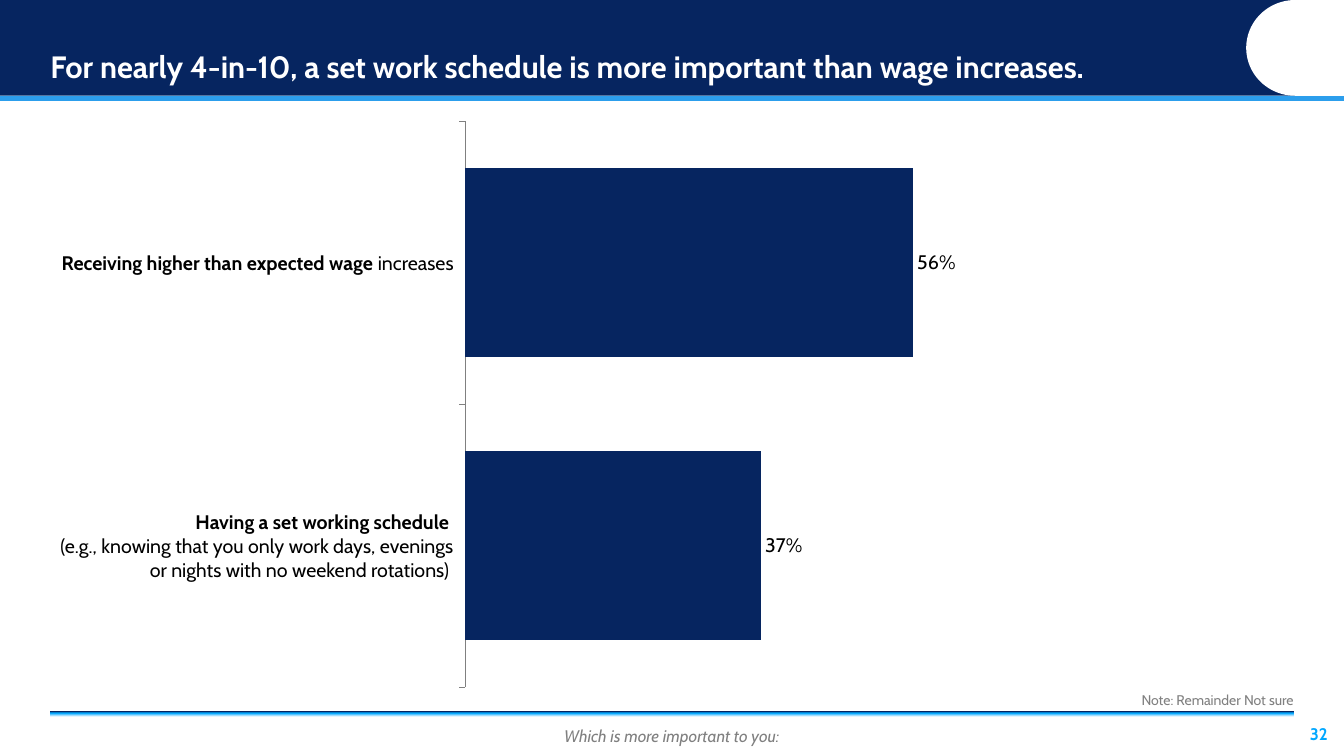
from lxml import etree
from pptx import Presentation
from pptx.chart.data import CategoryChartData
from pptx.dml.color import RGBColor
from pptx.enum.chart import XL_CHART_TYPE as ChartType, XL_LABEL_POSITION as LabelPosition
from pptx.enum.chart import XL_TICK_LABEL_POSITION as TickLabels, XL_TICK_MARK as TickMark
from pptx.enum.shapes import MSO_SHAPE as Preset
from pptx.enum.text import MSO_ANCHOR as Anchor, MSO_AUTO_SIZE as AutoSize, PP_ALIGN as Align
from pptx.oxml import parse_xml
from pptx.oxml.ns import nsdecls, qn
from pptx.util import Inches, Pt

FONT, NAVY, BLUE, GRAY = "Cabin", "062560", "00A7FF", "808080"


def color(value):
    return RGBColor.from_string(value)


def write(frame, *parts, size=14, fill="000000", bold=False, italic=False,
          align=Align.LEFT, anchor=Anchor.MIDDLE, margins=(0, 0, 0, 0), spacing=1.0):
    """Write one paragraph; a part is text, or a (text, bold) pair. \\n breaks the line."""
    frame.word_wrap = True
    frame.auto_size = AutoSize.NONE
    frame.vertical_anchor = anchor
    frame.margin_left, frame.margin_top, frame.margin_right, frame.margin_bottom = map(Inches, margins)
    para = frame.paragraphs[0]
    para.alignment, para.line_spacing, para.space_before = align, spacing, Pt(0)
    for part in parts:
        text, weight = part if isinstance(part, tuple) else (part, bold)
        for number, line in enumerate(text.split("\n")):
            if number:
                para.add_line_break()
            if line:
                span = para.add_run()
                span.text = line
                span.font.name, span.font.size = FONT, Pt(size)
                span.font.bold, span.font.italic = weight, italic
                span.font.color.rgb = color(fill)
    return para


deck = Presentation()
deck.slide_width, deck.slide_height = Inches(13.33), Inches(7.5)
page = deck.slides.add_slide(deck.slide_layouts[1])
shapes = page.shapes
title, question = shapes.title, page.placeholders[1]

# Page number
box = shapes.add_textbox(Inches(12.83), Inches(7.05), Inches(0.5), Inches(0.45))
write(box.text_frame, "32", size=12, fill=BLUE, bold=True, align=Align.CENTER)

# Header band, with the rounded white end on the right
for preset, left, top, width, height, fill, turn in (
    (Preset.RECTANGLE, 0, 0, 13.33, 0.95, NAVY, 0),
    (Preset.RECTANGLE, 0, 0.95, 13.33, 0.05, "2C9EEC", 0),
    (Preset.FLOWCHART_DELAY, 12.36, 0, 0.97, 0.95, "FFFFFF", 180),
):
    band = shapes.add_shape(preset, Inches(left), Inches(top), Inches(width), Inches(height))
    band.shadow.inherit = False
    band.fill.solid()
    band.fill.fore_color.rgb = color(fill)
    band.line.fill.background()
    band.rotation = turn

# Title and question, brought in front of the header
for holder, left, top, width, height in ((title, 0.5, 0.1, 12.05, 0.75),
                                         (question, 0.5, 7.05, 12.33, 0.45)):
    holder.left, holder.top = Inches(left), Inches(top)
    holder.width, holder.height = Inches(width), Inches(height)
    shapes._spTree.append(holder._element)

write(title.text_frame,
      "For nearly 4-in-10, a set work schedule is more important than wage increases.",
      size=22, fill="FFFFFF", bold=True, anchor=Anchor.BOTTOM, spacing=0.9)

para = write(question.text_frame, "Which is more important to you:", size=12, fill=GRAY,
             italic=True, align=Align.CENTER, margins=(0, 0.05, 0, 0))
properties = para._p.get_or_add_pPr()
properties.set("marL", "0")
properties.set("indent", "0")
etree.SubElement(properties, qn("a:buNone"))

# Gradient of the question bar: white, with a blue edge at the top
stops = "".join(
    f'<a:gs pos="{place * 1000}"><a:srgbClr val="{value}"/></a:gs>'
    for place, value in ((0, "FFFFFF"), (86, "FFFFFF"), (88, "CCEDFF"), (94, BLUE), (100, NAVY)))
question._element.spPr.append(parse_xml(
    f'<a:gradFill {nsdecls("a")} rotWithShape="1"><a:gsLst>{stops}</a:gsLst>'
    '<a:lin ang="16200000" scaled="0"/></a:gradFill>'))

# Answer labels
answers = (
    (("Receiving higher than expected wage ", True), ("increases", False)),
    (("Having a set working schedule \n", True),
     ("(e.g., knowing that you only work days, evenings or nights with no weekend rotations) ", False)),
)
table = shapes.add_table(len(answers), 1, Inches(0.5), Inches(1.21), Inches(4), Inches(5.62)).table
table.first_row = table.horz_banding = False
for row, answer in enumerate(answers):
    cell = table.cell(row, 0)
    cell.fill.background()
    cell.margin_left = cell.margin_top = cell.margin_right = cell.margin_bottom = 0
    cell.vertical_anchor = Anchor.MIDDLE
    write(cell.text_frame, *answer, align=Align.RIGHT)
    # The cell holds its own anchor and margins
    cell.text_frame._txBody.bodyPr.attrib.clear()

# Note
box = shapes.add_textbox(Inches(0.5), Inches(6.84), Inches(12.33), Inches(0.21))
write(box.text_frame, "Note: Remainder Not sure", size=10, fill=GRAY, align=Align.RIGHT,
      margins=(0, 0.04, 0, 0.04))

# Bar chart
data = CategoryChartData(number_format="0%")
data.categories = ["1", "2"]
data.add_series("Series 1", (0.56, 0.37))
chart = shapes.add_chart(ChartType.BAR_CLUSTERED, Inches(4.55), Inches(1.07),
                         Inches(8.28), Inches(5.76), data).chart
chart.has_legend = chart.has_title = False
chart.font.name, chart.font.size = FONT, Pt(14)
chart.font.color.rgb = color("000000")

answer_axis, share_axis = chart.category_axis, chart.value_axis
answer_axis.reverse_order = True
answer_axis.tick_label_position = TickLabels.NONE
answer_axis.major_tick_mark = TickMark.OUTSIDE
answer_axis.format.line.color.rgb = color(GRAY)
answer_axis.format.line.width = Pt(0.5)
share_axis.minimum_scale, share_axis.maximum_scale = 0, 1
share_axis.has_major_gridlines = False
share_axis.visible = False

plot = chart.plots[0]
plot.gap_width = 50
plot.vary_by_categories = False
bars = plot.series[0]
bars.format.fill.solid()
bars.format.fill.fore_color.rgb = color(NAVY)
labels = bars.data_labels
labels.show_value = True
labels.number_format, labels.number_format_is_linked = "0%", False
labels.position = LabelPosition.OUTSIDE_END

# Fixed inner plot area
area = chart._chartSpace.chart.plotArea
for old in area.findall(qn("c:layout")):
    area.remove(old)
layout = etree.Element(qn("c:layout"))
manual = etree.SubElement(layout, qn("c:manualLayout"))
for tag, value in (("layoutTarget", "inner"), ("xMode", "edge"), ("yMode", "edge"),
                   ("x", "0.007"), ("y", "0.023"), ("w", "0.959"), ("h", "0.975")):
    etree.SubElement(manual, qn(f"c:{tag}")).set("val", value)
area.insert(0, layout)

deck.save("out.pptx")
